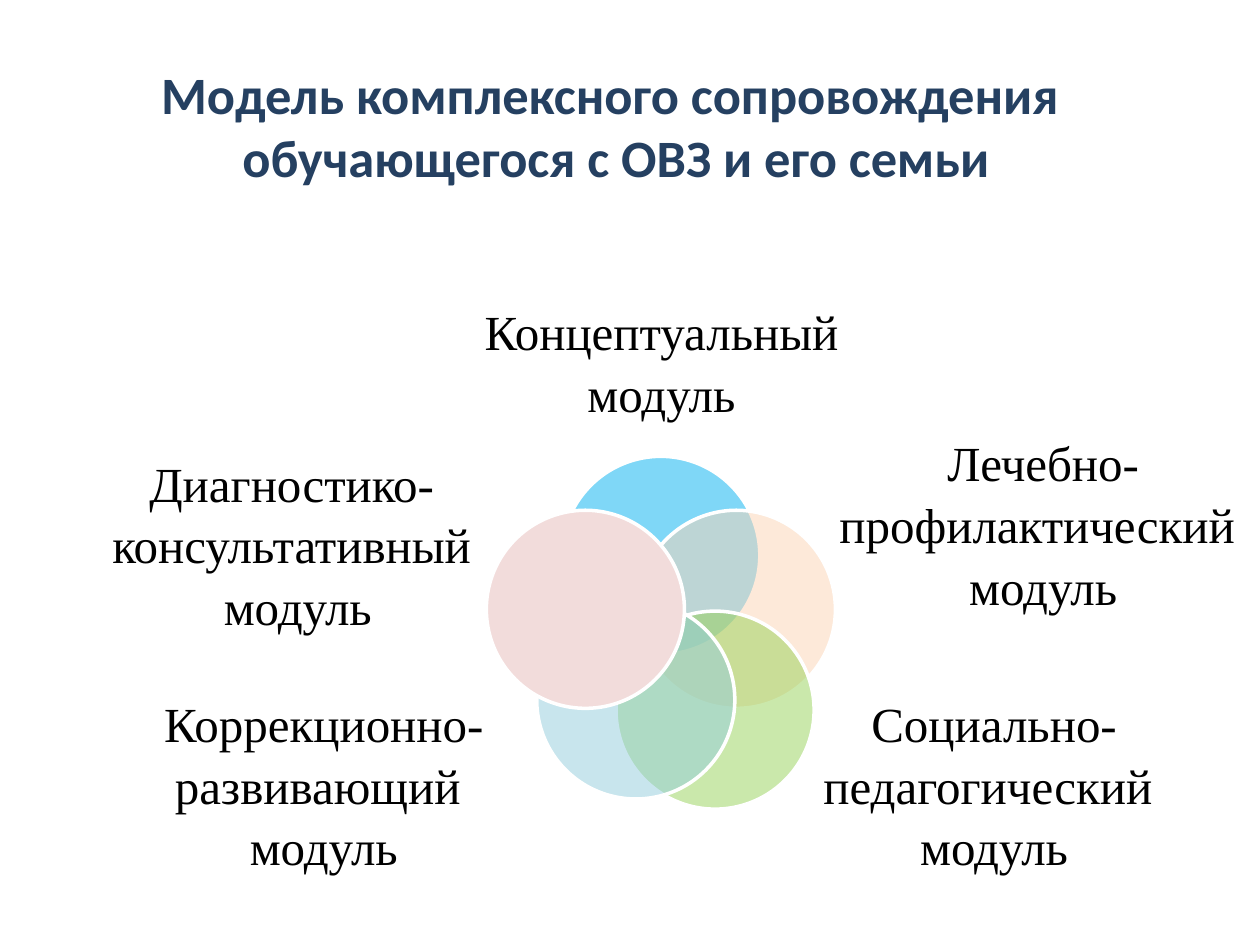
"""Build a slide with five overlapping circles, one for each support module."""
import pptx
import pptx.util
import pptx.dml.color
import pptx.enum.shapes
import pptx.enum.text
import pptx.oxml.ns
from lxml import etree

Pt = pptx.util.Pt
COLORS = {
    "title": "254061", "text": "000000", "line": "FFFFFF", "blue": "00B0F0",
    "peach": "FCD5B5", "green": "92D050", "aqua": "93CDDD", "rose": "F2DCDB",
}
SIZE = 113.2
MODULES = [
    ((321, 260.8, "blue", 50),
     (262.8, 167.8, 230.4, 76.3, 0, "Концептуальный модуль")),
    ((364.2, 291.6, "peach", 50),
     (476.6, 264.2, 239, 82.8, 14, "Лечебно-профилактический \nмодуль")),
    ((352, 349.2, "green", 48),
     (437, 406.1, 262.1, 82.8, 0, "Социально-педагогический \nмодуль")),
    ((306.7, 343.4, "aqua", 50),
     (36.7, 406.1, 296.6, 82.8, 0, "Коррекционно-развивающий \nмодуль")),
    ((277.9, 291.6, "rose", 100),
     (54.7, 275.8, 223.9, 82.8, 14, "Диагностико-консультативный\n модуль")),
]


def color(name):
    """Return the named colour."""
    return pptx.dml.color.RGBColor.from_string(COLORS[name])


def style(frame, face, size, name, bold=False):
    """Centre and format every paragraph of a text frame."""
    frame.word_wrap = True
    frame.vertical_anchor = pptx.enum.text.MSO_ANCHOR.MIDDLE
    for para in frame.paragraphs:
        para.alignment = pptx.enum.text.PP_ALIGN.CENTER
        para.font.name = face
        para.font.size = Pt(size)
        para.font.bold = bold
        para.font.color.rgb = color(name)


def add_title(slide, text):
    """Fill and place the title."""
    title = slide.shapes.title
    title.left, title.top = Pt(82.8), Pt(31.7)
    title.width, title.height = Pt(538.6), Pt(79.9)
    title.text_frame.text = text
    style(title.text_frame, "Calibri", 30, "title", True)


def add_disc(slide, left, top, name, alpha):
    """Add a white-edged circle with the given opacity in percent."""
    disc = slide.shapes.add_shape(
        pptx.enum.shapes.MSO_SHAPE.OVAL, Pt(left), Pt(top), Pt(SIZE), Pt(SIZE))
    disc.shadow.inherit = False
    disc.fill.solid()
    disc.fill.fore_color.rgb = color(name)
    disc.line.color.rgb = color("line")
    disc.line.width = Pt(2)
    if alpha < 100:
        qn = pptx.oxml.ns.qn
        tint = disc.fill._xPr.find(qn("a:solidFill")).find(qn("a:srgbClr"))
        etree.SubElement(tint, qn("a:alpha"), val=str(alpha * 1000))


def add_label(slide, left, top, width, height, base, text):
    """Add a module name, raised by a bottom inset."""
    box = slide.shapes.add_textbox(Pt(left), Pt(top), Pt(width), Pt(height))
    frame = box.text_frame
    frame.margin_left = frame.margin_right = frame.margin_top = 0
    frame.margin_bottom = Pt(base)
    frame.text = text
    style(frame, "Times New Roman", 28, "text")
    for para in frame.paragraphs:
        para.line_spacing = 1.05


def main():
    """Build and save the slide."""
    deck = pptx.Presentation()
    deck.slide_width, deck.slide_height = Pt(720), Pt(540)
    slide = deck.slides.add_slide(deck.slide_layouts[5])
    add_title(slide, "Модель комплексного сопровождения \n"
                     "обучающегося с ОВЗ и его семьи")
    for disc, label in MODULES:
        add_disc(slide, *disc)
        add_label(slide, *label)
    deck.save("out.pptx")


if __name__ == "__main__":
    main()
